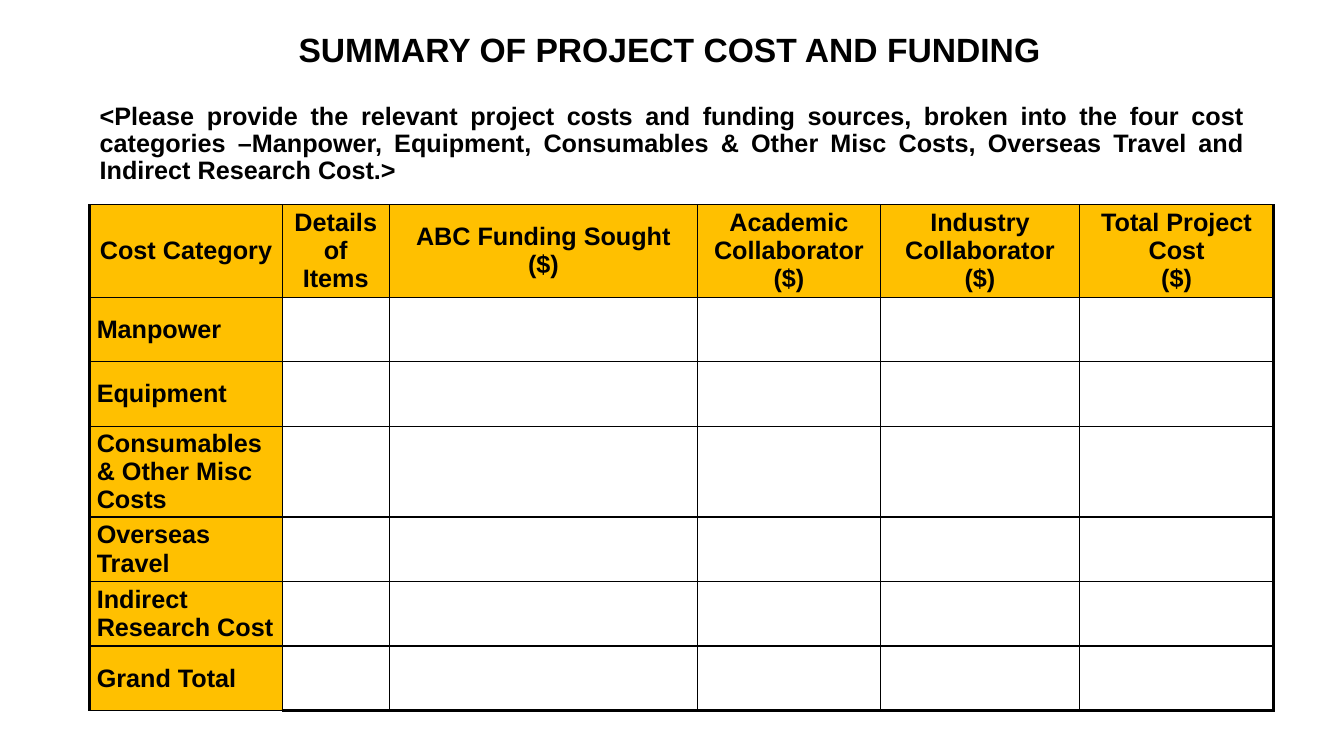
from dataclasses import dataclass

from lxml import etree
from pptx import Presentation
from pptx.dml.color import RGBColor
from pptx.enum.text import MSO_ANCHOR as Anchor, PP_ALIGN as Align
from pptx.oxml.ns import qn
from pptx.util import Inches, Pt

BLACK = "000000"
AMBER = "FFC000"
THIN, THICK = 1, 2.25
HEADERS = [
    "Cost Category",
    "Details of Items",
    "ABC Funding Sought\n($)",
    "Academic Collaborator ($)",
    "Industry Collaborator ($)",
    "Total Project Cost\n($)",
]
CATEGORIES = [
    "Manpower",
    "Equipment",
    "Consumables & Other Misc Costs",
    "Overseas Travel",
    "Indirect Research Cost",
    "Grand Total",
]
COL_WIDTHS = [1.91, 1.06, 3.06, 1.81, 1.98, 1.92]
ROW_HEIGHTS = [0.92] + [0.64] * len(CATEGORIES)


@dataclass
class TextBlock:
    text: str
    left: float
    top: float
    width: float
    height: float
    size: int
    align: Align
    anchor: Anchor
    space_before: float = 0


BLOCKS = [
    TextBlock("SUMMARY OF PROJECT COST AND FUNDING",
              0.89, -0.21, 11.5, 1.45, 24, Align.CENTER, Anchor.MIDDLE),
    TextBlock("<Please provide the relevant project costs and funding sources, "
              "broken into the four cost categories –Manpower, Equipment, "
              "Consumables & Other Misc Costs, Overseas Travel and Indirect "
              "Research Cost.>",
              0.89, 0.98, 11.55, 1.05, 18, Align.JUSTIFY, Anchor.TOP, 3.6),
]


def color(value: str) -> RGBColor:
    return RGBColor.from_string(value)


def apply(target, formats: dict) -> None:
    for name, value in formats.items():
        setattr(target, name, value)


def write(tf, text: str, size: int, paragraph_format: dict) -> None:
    tf.text = text
    for p in tf.paragraphs:
        apply(p, paragraph_format)
        for r in p.runs:
            apply(r.font, {"name": "Arial", "size": Pt(size), "bold": True})
            r.font.color.rgb = color(BLACK)


def add_text(s, block: TextBlock) -> None:
    box = map(Inches, (block.left, block.top, block.width, block.height))
    tf = s.shapes.add_textbox(*box).text_frame
    apply(tf, {"word_wrap": True, "vertical_anchor": block.anchor})
    write(tf, block.text, block.size, {
        "alignment": block.align,
        "line_spacing": 0.9,
        "space_before": Pt(block.space_before),
    })


def set_borders(cell, widths: dict[str, float]) -> None:
    tc_pr = cell._tc.get_or_add_tcPr()
    for i, (side, width) in enumerate(widths.items()):
        ln = etree.Element(qn(f"a:ln{side}"), w=str(Pt(width)))
        fill = etree.SubElement(ln, qn("a:solidFill"))
        etree.SubElement(fill, qn("a:srgbClr"), val=BLACK)
        tc_pr.insert(i, ln)


def add_cost_table(s) -> None:
    n_rows, n_cols = len(ROW_HEIGHTS), len(COL_WIDTHS)
    table = s.shapes.add_table(
        n_rows, n_cols, Inches(0.89), Inches(2.03),
        Inches(sum(COL_WIDTHS)), Inches(sum(ROW_HEIGHTS))).table
    apply(table, {"first_row": False, "horz_banding": False})
    for col, width in zip(table.columns, COL_WIDTHS):
        col.width = Inches(width)
    for row, height in zip(table.rows, ROW_HEIGHTS):
        row.height = Inches(height)

    for i in range(n_rows):
        for j in range(n_cols):
            cell = table.cell(i, j)
            if i == 0 or j == 0:
                apply(cell, {
                    "vertical_anchor": Anchor.MIDDLE,
                    "margin_left": Inches(0.07),
                    "margin_right": Inches(0.07),
                    "margin_top": 0,
                    "margin_bottom": 0,
                })
                text = HEADERS[j] if i == 0 else CATEGORIES[i - 1]
                align = Align.CENTER if i == 0 else Align.LEFT
                write(cell.text_frame, text, 18, {"alignment": align})
                cell.fill.solid()
                cell.fill.fore_color.rgb = color(AMBER)
            else:
                cell.fill.background()
            set_borders(cell, {
                "L": THICK if j == 0 else THIN,
                "R": THICK if j == n_cols - 1 else THIN,
                "T": THIN,
                "B": THICK if i == n_rows - 1 and j > 0 else THIN,
            })


def main() -> None:
    prs = Presentation()
    apply(prs, {"slide_width": Inches(13.33), "slide_height": Inches(7.5)})
    s = prs.slides.add_slide(prs.slide_layouts[6])
    for block in BLOCKS:
        add_text(s, block)
    add_cost_table(s)
    prs.save("out.pptx")


if __name__ == "__main__":
    main()
